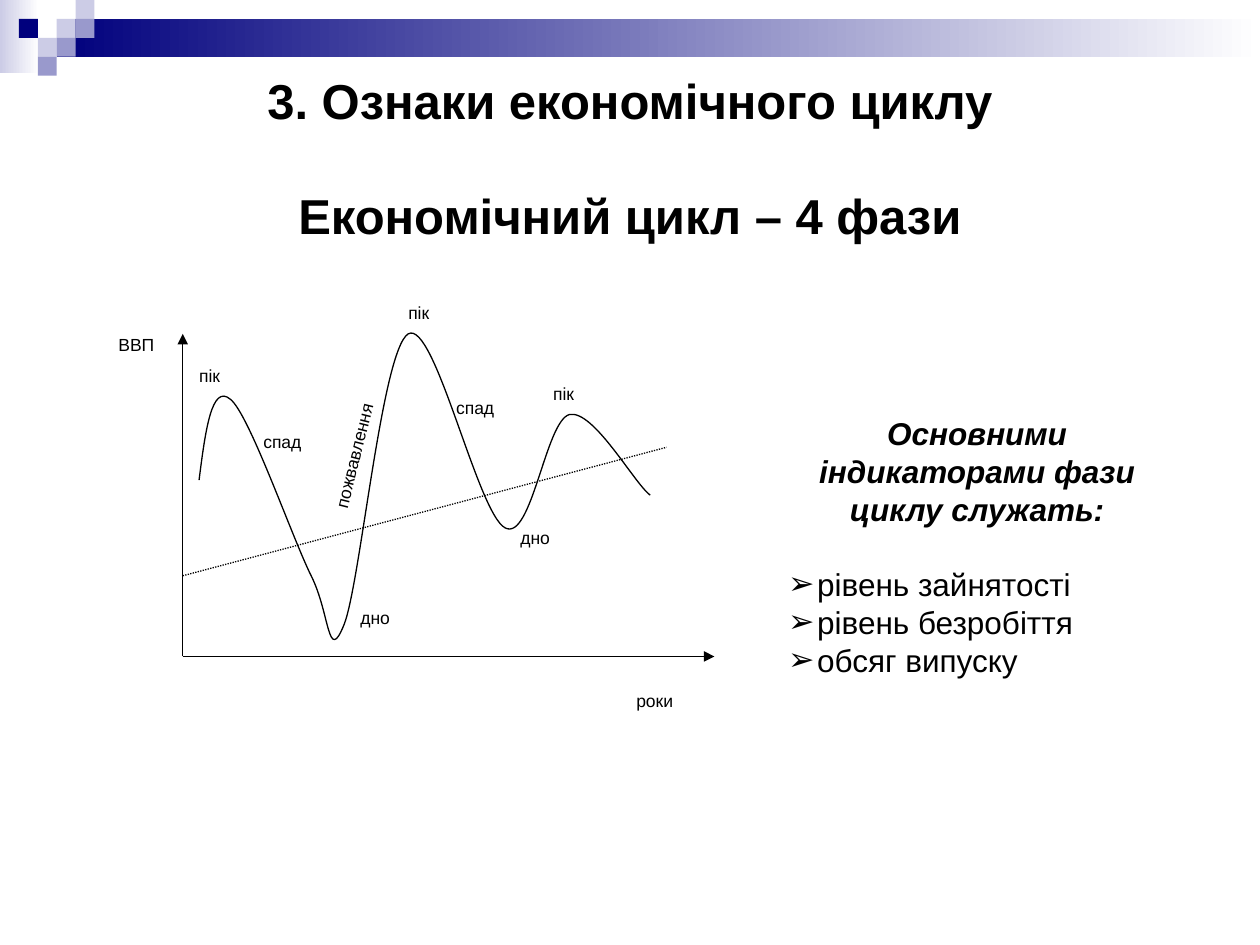
import pptx
import pptx.util
import pptx.dml.color
import pptx.enum.dml
import pptx.enum.shapes
import pptx.enum.text
import pptx.oxml
import pptx.oxml.ns
from dataclasses import dataclass

COLUMNS, ROWS = 100, 75
ALIGN = pptx.enum.text.PP_ALIGN
ANCHOR = pptx.enum.text.MSO_ANCHOR


@dataclass
class Theme:
    font: str = "Arial"
    ink: str = "000000"
    paper: str = "FFFFFF"
    navy: str = "00007D"
    violet: str = "9999CC"
    lavender: str = "CCCCE6"
    title_size: float = 28
    body_size: float = 18
    label_size: float = 10
    line_width: float = 0.75


def color(value):
    return pptx.dml.color.RGBColor.from_string(value)


def append_xml(parent, tag, **attributes):
    element = pptx.oxml.parse_xml(f'<a:{tag} {pptx.oxml.ns.nsdecls("a")}/>')
    for name, value in attributes.items():
        element.set(name, str(value))
    parent.append(element)
    return element


def write(paragraph, text, *, theme, size, bold=False, italic=False,
          align=ALIGN.LEFT, before=0, bullet=None, indent=0):
    properties = paragraph._p.get_or_add_pPr()
    properties.set("marL", str(indent))
    properties.set("indent", str(-indent))
    paragraph.alignment = align
    paragraph.space_before = pptx.util.Pt(before)
    paragraph.space_after = pptx.util.Pt(0)
    if bullet:
        append_xml(properties, "buChar", char=bullet)
    else:
        append_xml(properties, "buNone")
    run = paragraph.add_run()
    run.text = text
    font = run.font
    font.name, font.size = theme.font, pptx.util.Pt(size)
    font.bold, font.italic = bold, italic
    font.color.rgb = color(theme.ink)


class SlideBuilder:
    """Draws themed elements on one slide, measured in grid columns and rows."""

    def __init__(self, presentation, theme):
        self.theme = theme
        self.column = presentation.slide_width / COLUMNS
        self.row = presentation.slide_height / ROWS
        self.slide = presentation.slides.add_slide(presentation.slide_layouts[1])
        self.shapes = self.slide.shapes

    def x(self, columns):
        return round(columns * self.column)

    def y(self, rows):
        return round(rows * self.row)

    def box(self, left, top, width, height):
        return self.x(left), self.y(top), self.x(width), self.y(height)

    def start_group(self):
        self.shapes = self.slide.shapes.add_group_shape().shapes

    def placeholder(self, index, box, paragraphs):
        shape = self.slide.placeholders[index]
        shape.left, shape.top, shape.width, shape.height = self.box(*box)
        frame = shape.text_frame
        frame.auto_size = pptx.enum.text.MSO_AUTO_SIZE.NONE
        frame.vertical_anchor = ANCHOR.MIDDLE
        for number, (text, options) in enumerate(paragraphs):
            paragraph = frame.add_paragraph() if number else frame.paragraphs[0]
            write(paragraph, text, theme=self.theme, **options)

    def rectangle(self, box, fill, fade_to=None):
        shape = self.shapes.add_shape(
            pptx.enum.shapes.MSO_SHAPE.RECTANGLE, *self.box(*box))
        shape.shadow.inherit = False
        shape.line.fill.background()
        if fade_to:
            shape.fill.gradient()
            shape.fill.gradient_angle = 0
            for stop, value, position in zip(
                    shape.fill.gradient_stops, (fill, fade_to), (0, 1)):
                stop.color.rgb, stop.position = color(value), position
        else:
            shape.fill.solid()
            shape.fill.fore_color.rgb = color(fill)

    def label(self, text, box, rotation=0):
        shape = self.shapes.add_textbox(*self.box(*box))
        shape.rotation = rotation
        frame = shape.text_frame
        frame.word_wrap = True
        frame.margin_left = frame.margin_right = 0
        frame.margin_top = frame.margin_bottom = 0
        write(frame.paragraphs[0], text, theme=self.theme, size=self.theme.label_size)

    def stroke(self, line):
        line.color.rgb = color(self.theme.ink)
        line.width = pptx.util.Pt(self.theme.line_width)

    def line(self, start, end, arrow=False, dotted=False):
        connector = self.shapes.add_connector(
            pptx.enum.shapes.MSO_CONNECTOR.STRAIGHT,
            self.x(start[0]), self.y(start[1]), self.x(end[0]), self.y(end[1]))
        self.stroke(connector.line)
        if dotted:
            connector.line.dash_style = pptx.enum.dml.MSO_LINE.ROUND_DOT
        if arrow:
            append_xml(connector.line._get_or_add_ln(), "tailEnd", type="triangle")
        append_xml(connector._element.spPr, "effectLst")

    def curve(self, start, knots):
        builder = self.shapes.build_freeform(
            self.x(start[0]), self.y(start[1]), scale=1.0)
        builder.add_line_segments(
            [(self.x(x), self.y(y)) for x, y in knots], close=False)
        shape = builder.convert_to_shape()
        shape.shadow.inherit = False
        shape.fill.background()
        self.stroke(shape.line)
        segments = shape._element.xpath(".//a:lnTo")
        outline = segments[0].getparent()
        for first in range(0, len(segments), 3):
            bezier = append_xml(outline, "cubicBezTo")
            for segment in segments[first:first + 3]:
                bezier.append(segment[0])
                outline.remove(segment)


def draw_banner(builder):
    theme, side = builder.theme, 1.5
    builder.start_group()
    builder.rectangle((0, 0, 3.1, 5.8), theme.lavender, theme.paper)
    builder.rectangle((4.5, side, 95.5, 3), theme.navy, theme.paper)
    for column, row, fill in (
            (3, 1, theme.lavender), (4, 0, theme.lavender), (4, 1, theme.violet),
            (2, 2, theme.lavender), (1, 1, theme.navy), (3, 2, theme.violet),
            (2, 3, theme.violet)):
        builder.rectangle((column * side, row * side, side, side), fill)


def draw_cycle(builder):
    origin = (14.5, 52.1)
    builder.start_group()
    builder.line(origin, (14.5, 26.5), arrow=True)
    builder.line(origin, (56.7, 52.1), arrow=True)
    builder.line((14.5, 45.7), (52.9, 35.5), dotted=True)
    builder.curve((15.8, 38.1), [
        (16.3, 34.2), (16.8, 30.4), (18.3, 31.7),
        (19.8, 32.9), (23.2, 42.7), (24.7, 45.7),
        (26.2, 48.7), (26, 52.8), (27.3, 49.6),
        (28.6, 46.4), (30.3, 27.8), (32.4, 26.5),
        (34.5, 25.3), (37.9, 40.8), (40.1, 41.9),
        (42.2, 43), (43.3, 33.4), (45.2, 32.9),
        (47.1, 32.5), (50.3, 38.3), (51.6, 39.3)])
    for text, left, top in (
            ("роки", 50.5, 54.8), ("ВВП", 9.4, 26.5),
            ("пік", 15.8, 29), ("пік", 32.4, 24), ("пік", 43.9, 30.4),
            ("спад", 20.9, 34.2), ("спад", 36.2, 31.5),
            ("дно", 28.6, 48.2), ("дно", 41.3, 41.8)):
        builder.label(text, (left, top, 3.8, 1.3 if text == "пік" else 2.6))
    builder.label("пожвавлення", (24, 34.8, 9, 2.4), rotation=284.1)


def main():
    presentation = pptx.Presentation()
    presentation.slide_width = pptx.util.Inches(10)
    presentation.slide_height = pptx.util.Inches(7.5)
    theme = Theme()
    builder = SlideBuilder(presentation, theme)
    draw_banner(builder)
    heading = dict(size=theme.title_size, bold=True, align=ALIGN.CENTER)
    builder.placeholder(0, (5, 5, 90, 15), [
        ("3. Ознаки економічного циклу", heading),
        ("Економічний цикл – 4 фази", dict(heading, before=32.5))])
    item = dict(size=theme.body_size, bullet="➢", indent=builder.x(2.3))
    builder.placeholder(1, (61.55, 32.35, 32, 22), [
        ("Основними індикаторами фази циклу служать:",
         dict(size=theme.body_size, bold=True, italic=True, align=ALIGN.CENTER)),
        ("рівень зайнятості", dict(item, before=21.5)),
        ("рівень безробіття", item),
        ("обсяг випуску", item)])
    draw_cycle(builder)
    presentation.save("out.pptx")


if __name__ == "__main__":
    main()
